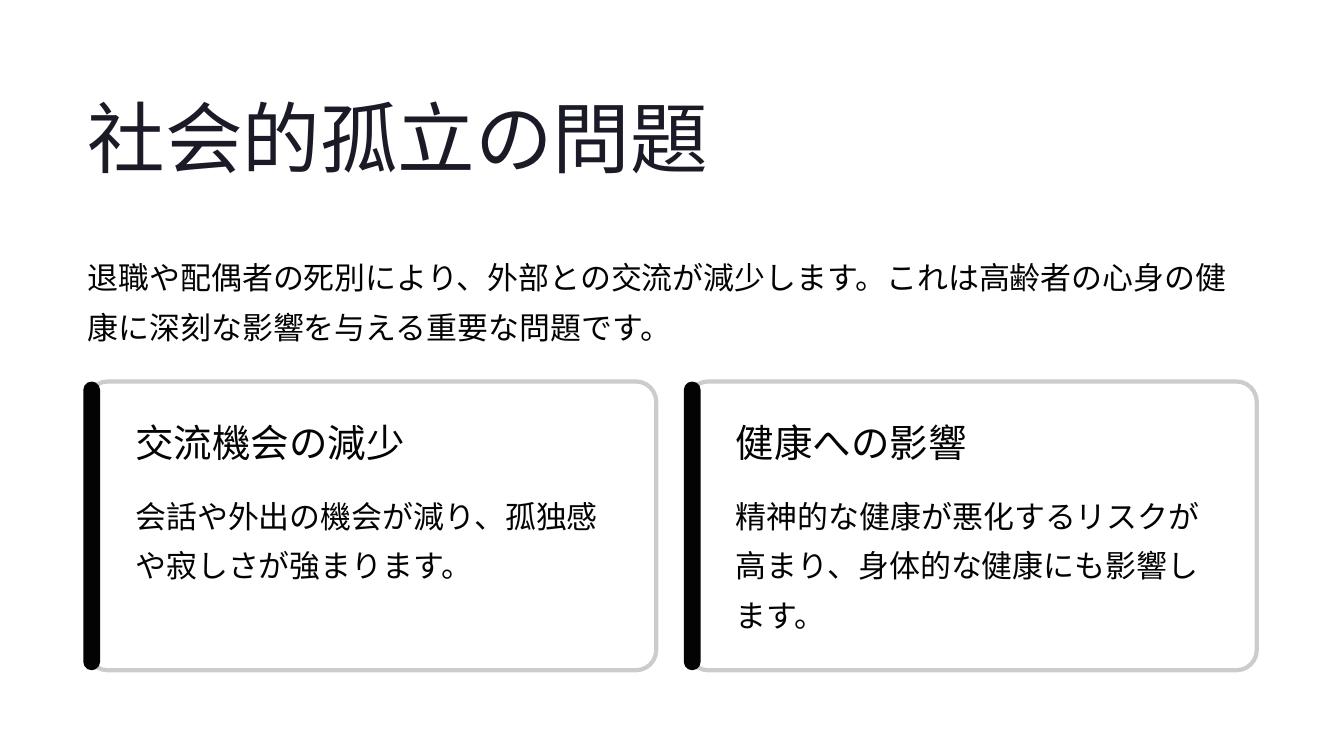
"""Build a slide on social isolation with an introduction and two cards."""
from dataclasses import dataclass

from pptx import Presentation
from pptx.dml.color import RGBColor
from pptx.enum.shapes import MSO_SHAPE
from pptx.enum.text import MSO_ANCHOR, PP_ALIGN
from pptx.slide import Slide
from pptx.util import Pt

ROUNDED = MSO_SHAPE.ROUNDED_RECTANGLE
TOP = MSO_ANCHOR.TOP
LEFT = PP_ALIGN.LEFT

INK = "030303"
TITLE_INK = "1B1B27"
WHITE = "FFFFFF"
BORDER = "CCCCCC"

MARGIN = 75
CARD_TOP = 327
CARD_WIDTH = 487.5
CARD_HEIGHT = 247.5
CARD_STEP = 514.75
BAR_WIDTH = 14.4
BAR_OVERHANG = 3.6
CARD_INDENT = 41


@dataclass(frozen=True)
class TextStyle:
    font: str
    size: float
    line_spacing: float
    color: str
    wrap: bool


@dataclass(frozen=True)
class Card:
    heading: str
    body: str
    body_height: float


TITLE = TextStyle("Inter", 66.5, 83.5, TITLE_INK, False)
HEADING = TextStyle("Inter", 33, 41.5, INK, False)
BODY = TextStyle("Lato", 26.5, 42.5, INK, True)

CARDS = [
    Card("交流機会の減少", "会話や外出の機会が減り、孤独感や寂しさが強まります。", 85.5),
    Card("健康への影響", "精神的な健康が悪化するリスクが高まり、身体的な健康にも影響します。", 129),
]


def rgb(value: str) -> RGBColor:
    """Turn a hex string into a colour."""
    return RGBColor.from_string(value)


def add_text(page: Slide, text: str, style: TextStyle,
             left: float, top: float, width: float, height: float) -> None:
    """Add a text box without insets in the given style."""
    box = page.shapes.add_textbox(Pt(left), Pt(top), Pt(width), Pt(height))
    frame = box.text_frame
    frame.margin_left = frame.margin_right = 0
    frame.margin_top = frame.margin_bottom = 0
    frame.vertical_anchor = TOP
    frame.word_wrap = style.wrap
    frame.text = text
    para = frame.paragraphs[0]
    para.alignment = LEFT
    para.line_spacing = Pt(style.line_spacing)
    for span in para.runs:
        span.font.name = style.font
        span.font.size = Pt(style.size)
        span.font.color.rgb = rgb(style.color)


def add_panel(page: Slide, left: float, width: float, rounding: float,
              fill: str, border: str | None = None) -> None:
    """Add a rounded panel of card height, with an optional border."""
    panel = page.shapes.add_shape(
        ROUNDED, Pt(left), Pt(CARD_TOP), Pt(width), Pt(CARD_HEIGHT))
    panel.shadow.inherit = False
    panel.adjustments[0] = rounding
    panel.fill.solid()
    panel.fill.fore_color.rgb = rgb(fill)
    if border:
        panel.line.color.rgb = rgb(border)
        panel.line.width = Pt(3.6)
    else:
        panel.line.fill.background()


def add_card(page: Slide, card: Card, left: float) -> None:
    """Add a bordered card with an accent bar, a heading and a body."""
    add_panel(page, left, CARD_WIDTH, 0.07, WHITE, BORDER)
    add_panel(page, left - BAR_OVERHANG, BAR_WIDTH, 0.5, INK)
    text_left = left + CARD_INDENT
    add_text(page, card.heading, HEADING, text_left, 357, 335, 41.5)
    add_text(page, card.body, BODY, text_left, 415.5, 416, card.body_height)


def main() -> None:
    """Build the deck and save it."""
    deck = Presentation()
    deck.slide_width = Pt(1152)
    deck.slide_height = Pt(648)
    page = deck.slides.add_slide(deck.slide_layouts[6])
    page.background.fill.solid()
    page.background.fill.fore_color.rgb = rgb(WHITE)

    add_text(page, "社会的孤立の問題", TITLE, MARGIN, 73.5, 669.5, 83.5)
    add_text(
        page,
        "退職や配偶者の死別により、外部との交流が減少します。"
        "これは高齢者の心身の健康に深刻な影響を与える重要な問題です。",
        BODY, MARGIN, 211, 1002, 85.5)
    for index, card in enumerate(CARDS):
        add_card(page, card, MARGIN + index * CARD_STEP)

    deck.save("out.pptx")


if __name__ == "__main__":
    main()
